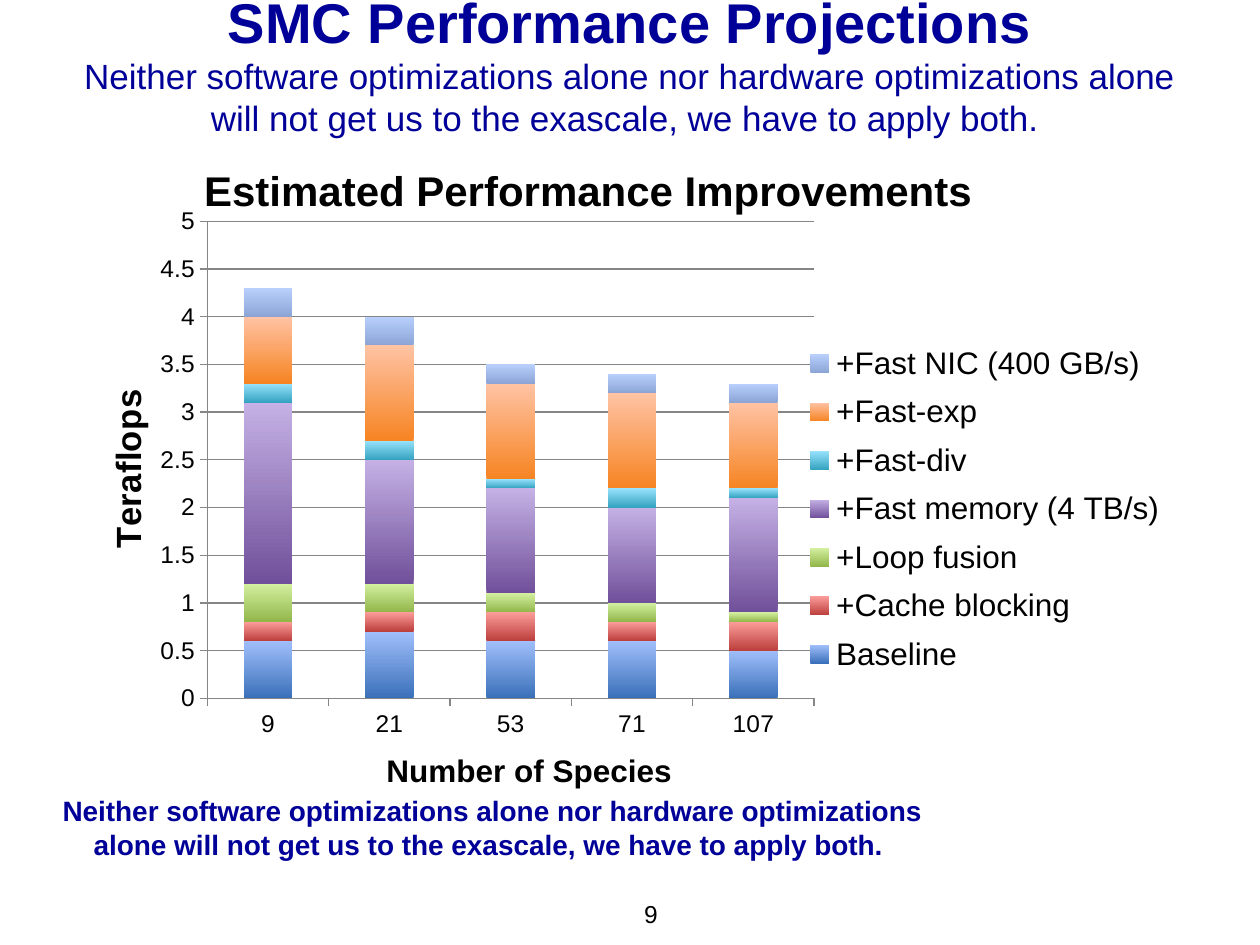
import pptx
import pptx.chart.data
import pptx.dml.color
import pptx.enum.chart
import pptx.enum.text
import pptx.util
from lxml import etree

CHART_NS = "http://schemas.openxmlformats.org/drawingml/2006/chart"


def color(value):
    return pptx.dml.color.RGBColor.from_string(value)


def place(element, index, **shares):
    tag = f"{{{CHART_NS}}}"
    existing = element.find(f"{tag}layout")
    if existing is not None:
        element.remove(existing)
    layout = etree.Element(f"{tag}layout")
    manual = etree.SubElement(layout, f"{tag}manualLayout")
    for name, value in shares.items():
        etree.SubElement(manual, f"{tag}{name}").set("val", str(value))
    element.insert(index, layout)


class Deck:
    font_name = "Arial"
    navy = "000099"
    black = "000000"
    gray = "868686"
    columns, rows = 60, 45

    def __init__(self):
        self.presentation = pptx.Presentation()
        self.presentation.slide_width = pptx.util.Inches(10)
        self.presentation.slide_height = pptx.util.Inches(7.5)
        self.slide = self.presentation.slides.add_slide(self.presentation.slide_layouts[6])

    def area(self, column, row, width, height):
        column_width = self.presentation.slide_width / self.columns
        row_height = self.presentation.slide_height / self.rows
        return (int(column * column_width), int(row * row_height),
                int(width * column_width), int(height * row_height))

    def style(self, font, size, value, bold=False):
        font.name = self.font_name
        font.size = pptx.util.Pt(size)
        font.bold = bold
        font.color.rgb = color(value)

    def text(self, area, lines, value, anchor="TOP", bottom=0.05):
        shape = self.slide.shapes.add_textbox(*self.area(*area))
        frame = shape.text_frame
        frame.word_wrap = True
        frame.vertical_anchor = pptx.enum.text.MSO_ANCHOR[anchor]
        frame.margin_bottom = pptx.util.Inches(bottom)
        paragraph = frame.paragraphs[0]
        paragraph.alignment = pptx.enum.text.PP_ALIGN.CENTER
        for index, (words, size, bold) in enumerate(lines):
            if index:
                paragraph.add_line_break()
            run = paragraph.add_run()
            run.text = words
            self.style(run.font, size, value, bold)

    def chart_title(self, title, words, size, x, y, rotation=0):
        frame = title.text_frame
        run = frame.paragraphs[0].add_run()
        run.text = words
        self.style(run.font, size, self.black, True)
        frame._txBody.bodyPr.set("rot", str(rotation * 60000))
        place(title._element, 1, xMode="edge", yMode="edge", x=x, y=y)

    def axis(self, axis):
        axis.format.line.color.rgb = color(self.gray)
        axis.format.line.width = pptx.util.Pt(0.75)
        axis.major_tick_mark = pptx.enum.chart.XL_TICK_MARK.OUTSIDE
        axis.minor_tick_mark = pptx.enum.chart.XL_TICK_MARK.NONE
        self.style(axis.tick_labels.font, 14, self.black)

    def stacked_chart(self, area, title, category_title, value_title, categories, series):
        data = pptx.chart.data.CategoryChartData()
        data.categories = categories
        for name, values, _, _ in series:
            data.add_series(name, values)
        chart = self.slide.shapes.add_chart(
            pptx.enum.chart.XL_CHART_TYPE.COLUMN_STACKED, *self.area(*area), data).chart
        self.style(chart.font, 14, self.black)
        chart.has_title = True
        self.chart_title(chart.chart_title, title, 24, 0.1, 0.03)
        self.axis(chart.category_axis)
        self.chart_title(chart.category_axis.axis_title, category_title, 18, 0.27, 0.93)
        value_axis = chart.value_axis
        self.axis(value_axis)
        self.chart_title(value_axis.axis_title, value_title, 20, 0.01, 0.38, -90)
        value_axis.minimum_scale, value_axis.maximum_scale = 0, 5
        value_axis.major_unit = 0.5
        value_axis.has_major_gridlines = True
        value_axis.major_gridlines.format.line.color.rgb = color(self.gray)
        plot = chart.plots[0]
        plot.gap_width, plot.overlap = 150, 100
        plot.vary_by_categories = False
        for item, (_, _, dark, light) in zip(plot.series, series):
            fill = item.format.fill
            fill.gradient()
            fill.gradient_angle = 90
            for stop, value in zip(fill.gradient_stops, (dark, light)):
                stop.color.rgb = color(value)
        chart.has_legend = True
        legend = chart.legend
        legend.position = pptx.enum.chart.XL_LEGEND_POSITION.RIGHT
        legend.include_in_layout = False
        self.style(legend.font, 18, self.black)
        place(legend._element, 1, xMode="edge", yMode="edge", x=0.66, y=0.3, w=0.34, h=0.54)
        place(chart._chartSpace.chart.plotArea, 0, layoutTarget="inner",
              xMode="edge", yMode="edge", x=0.11, y=0.13, w=0.56, h=0.73)


def main():
    deck = Deck()
    message = ("Neither software optimizations alone nor hardware optimizations alone "
               "will not get us to the exascale, we have to apply both. ")
    deck.text((3, 1, 54, 6), [("SMC Performance Projections", 32, True), (message, 20, False)],
              deck.navy, "MIDDLE", 0.38)
    deck.text((24, 42.5, 14, 2), [("9", 14, False)], deck.black)
    deck.text((1, 37.5, 44.9, 2.9), [(message, 16, True)], deck.navy)
    deck.stacked_chart(
        (4.2, 6.5, 51.6, 31.5), "Estimated Performance Improvements",
        "Number of Species", "Teraflops", ["9", "21", "53", "71", "107"],
        [("Baseline", (0.6, 0.7, 0.6, 0.6, 0.5), "3A70B9", "A0BFFB"),
         ("+Cache blocking", (0.2, 0.2, 0.3, 0.2, 0.3), "BC3F3C", "FB9C9A"),
         ("+Loop fusion", (0.4, 0.3, 0.2, 0.2, 0.1), "92B64A", "D3F0A0"),
         ("+Fast memory (4 TB/s)", (1.9, 1.3, 1.1, 1, 1.2), "70509A", "C5B1E5"),
         ("+Fast-div", (0.2, 0.2, 0.1, 0.2, 0.1), "35A3C0", "98E2FC"),
         ("+Fast-exp", (0.7, 1, 1, 1, 0.9), "F68423", "FFC3A4"),
         ("+Fast NIC (400 GB/s)", (0.3, 0.3, 0.2, 0.2, 0.2), "8BA6D6", "B9CFFC")])
    deck.presentation.save("out.pptx")


if __name__ == "__main__":
    main()
